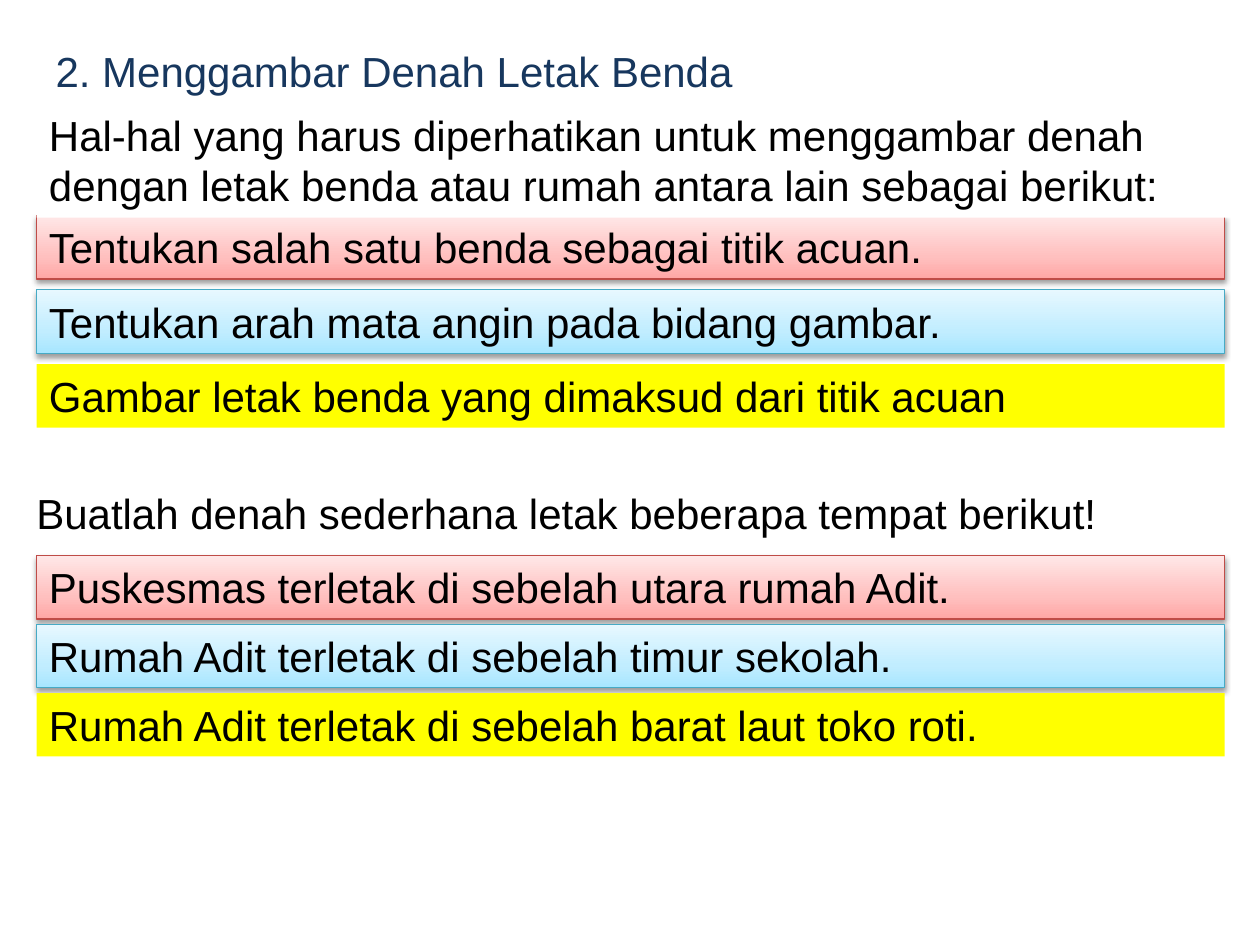
from copy import deepcopy

from lxml import etree
from pptx import Presentation
from pptx import util as u
from pptx.dml.color import RGBColor
from pptx.enum import shapes, text
from pptx.oxml import ns

TITLE = "2. Menggambar Denah Letak Benda"
INTRO = ("Hal-hal yang harus diperhatikan untuk menggambar denah "
         "dengan letak benda atau rumah antara lain sebagai berikut:")
STEPS = [
    "Tentukan salah satu benda sebagai titik acuan.",
    "Tentukan arah mata angin pada bidang gambar.",
    "Gambar letak benda yang dimaksud dari titik acuan",
]
TASK = "Buatlah denah sederhana letak beberapa tempat berikut!"
PLACES = [
    "Puskesmas terletak di sebelah utara rumah Adit.",
    "Rumah Adit terletak di sebelah timur sekolah.",
    "Rumah Adit terletak di sebelah barat laut toko roti.",
]
COLORS = {
    "title": "17375E", "text": "000000", "white": "FFFFFF", "yellow": "FFFF00",
    "red_line": "BF4C48", "blue_line": "46AAC5", "shadow": "000000",
    "red_dark": "FFA6A5", "red_mid": "FFC0BF", "red_light": "FFE7E7",
    "blue_dark": "A7E6FF", "blue_mid": "C1EDFF", "blue_light": "E7F8FF",
}
STYLES = ["red", "blue", "yellow"]
STOPS = [("dark", 0), ("mid", 0.35), ("light", 1)]
LEFT, WIDTH, HEIGHT = 20.9, 679, 36.3


def rgb(name):
    return RGBColor.from_string(COLORS[name])


def write(shape, content, color="text", size=24, wrap=True, indent=0):
    frame = shape.text_frame
    frame.text = content
    frame.word_wrap = wrap
    frame.auto_size = text.MSO_AUTO_SIZE.SHAPE_TO_FIT_TEXT
    frame.vertical_anchor = text.MSO_ANCHOR.TOP
    paragraph = frame.paragraphs[0]
    paragraph.alignment = text.PP_ALIGN.LEFT
    if indent:
        properties = paragraph._p.get_or_add_pPr()
        properties.set("marL", str(u.Pt(indent)))
        properties.set("indent", "0")
    font = paragraph.runs[0].font
    font.name, font.size = "Arial", u.Pt(size)
    font.color.rgb = rgb(color)


def place(shape, left, top, width, height):
    shape.left, shape.top = u.Pt(left), u.Pt(top)
    shape.width, shape.height = u.Pt(width), u.Pt(height)


def add_gradient(shape, style):
    shape.fill.gradient()
    shape.fill.gradient_angle = 90
    stop_list = shape._element.spPr.find(".//" + ns.qn("a:gsLst"))
    stop_list.append(deepcopy(stop_list[0]))
    for stop, (tone, position) in zip(shape.fill.gradient_stops, STOPS):
        stop.color.rgb = rgb(f"{style}_{tone}")
        stop.position = position


def add_shadow(shape):
    effects = shape._element.spPr.find(ns.qn("a:effectLst"))
    shadow = etree.SubElement(effects, ns.qn("a:outerShdw"), blurRad=str(u.Pt(3.1)),
                              dist=str(u.Pt(1.6)), dir="5400000", rotWithShape="0")
    color = etree.SubElement(shadow, ns.qn("a:srgbClr"), val=COLORS["shadow"])
    etree.SubElement(color, ns.qn("a:alpha"), val="38000")


def add_box(slide, content, top, style="white", left=LEFT, width=WIDTH, height=HEIGHT):
    shape = slide.shapes.add_shape(shapes.MSO_SHAPE.RECTANGLE, 0, 0, 0, 0)
    place(shape, left, top, width, height)
    shape.shadow.inherit = False
    if style in COLORS:
        shape.fill.solid()
        shape.fill.fore_color.rgb = rgb(style)
        shape.line.fill.background()
    else:
        add_gradient(shape, style)
        shape.line.color.rgb = rgb(f"{style}_line")
        shape.line.width = u.Pt(0.75)
        add_shadow(shape)
    write(shape, content)


def add_list(slide, items, top, pitch):
    for index, (item, style) in enumerate(zip(items, STYLES)):
        add_box(slide, item, top + index * pitch, style)


def main():
    presentation = Presentation()
    presentation.slide_width, presentation.slide_height = u.Pt(720), u.Pt(540)
    slide = presentation.slides.add_slide(presentation.slide_layouts[5])
    title = slide.shapes.title
    place(title, 11.5, 22.3, 419, HEIGHT)
    write(title, TITLE, color="title", wrap=False, indent=13)
    add_list(slide, STEPS, top=123.1, pitch=42.5)
    add_box(slide, INTRO, top=59, width=685, height=65.4)
    add_list(slide, PLACES, top=317.4, pitch=39.3)
    add_box(slide, TASK, top=275.3, left=13.7, width=668)
    presentation.save("out.pptx")


if __name__ == "__main__":
    main()
